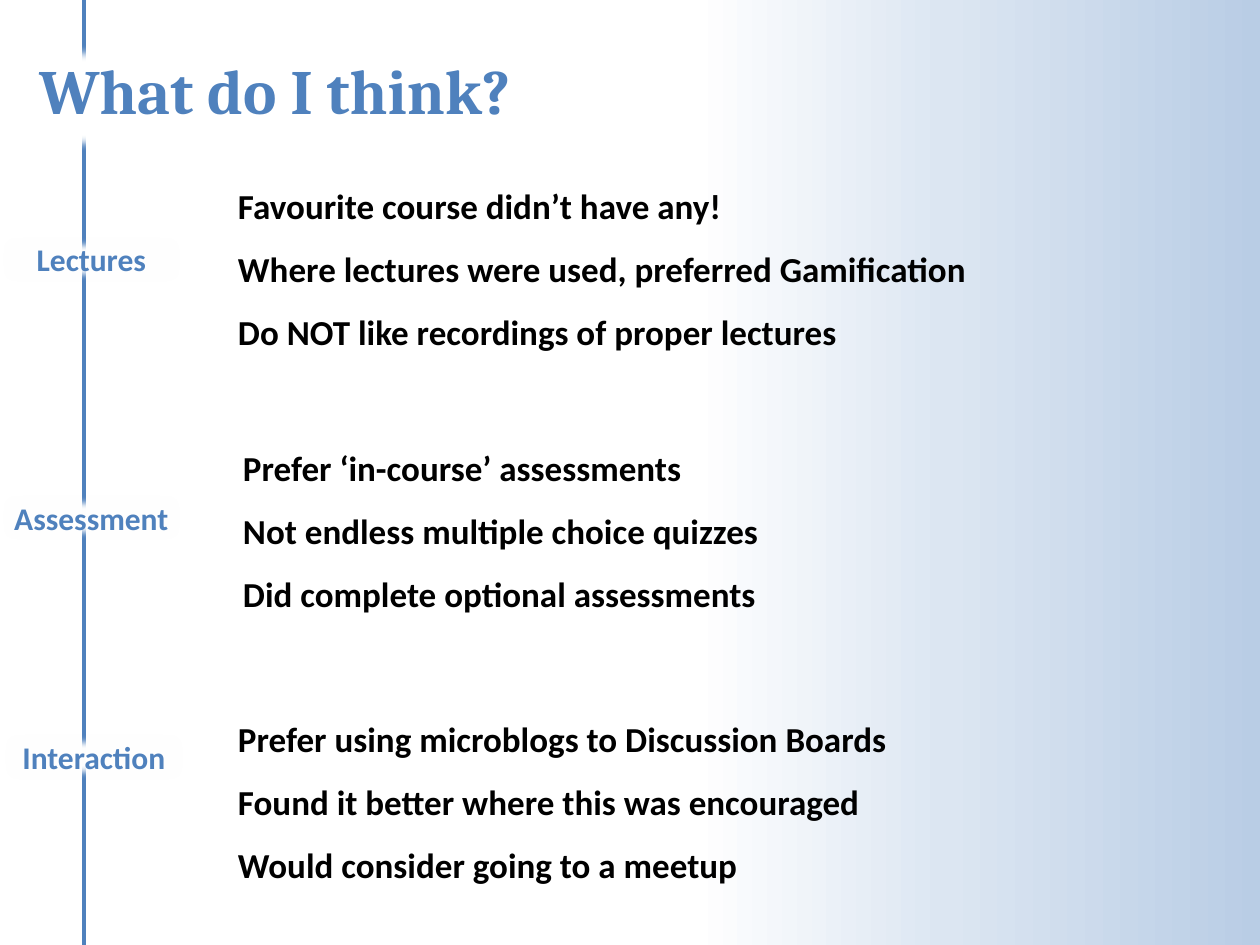
from copy import deepcopy

from lxml import etree
from pptx import Presentation
from pptx.dml.color import RGBColor
from pptx.enum import shapes, text
from pptx.oxml import ns
from pptx.util import Inches, Pt

BLUE = RGBColor(0x4F, 0x81, 0xBD)
PALE_BLUE = RGBColor(0xDC, 0xE6, 0xF2)
MID_BLUE = RGBColor(0xB9, 0xCD, 0xE5)
WHITE = RGBColor(0xFF, 0xFF, 0xFF)
BLACK = RGBColor(0, 0, 0)

HEADING = {"name": "Cambria", "size": Pt(36), "bold": True}
LABEL = {"name": "Calibri", "size": Pt(18), "bold": True}
BODY = {"name": "Calibri", "size": Pt(20), "bold": True}


def write(box, lines, style, color, align, spacing=1.0):
    frame = box.text_frame
    frame.word_wrap = True
    frame.auto_size = text.MSO_AUTO_SIZE.SHAPE_TO_FIT_TEXT
    frame.vertical_anchor = text.MSO_ANCHOR.TOP
    frame.text = "\n".join(lines)
    for para in frame.paragraphs:
        para.alignment = align
        para.line_spacing = spacing
        for span in para.runs:
            for name, value in style.items():
                setattr(span.font, name, value)
            span.font.color.rgb = color


def whiten(box):
    """White fill with soft edges, which interrupts the timeline."""
    box.fill.solid()
    box.fill.fore_color.rgb = WHITE
    box.line.fill.background()
    effects = etree.SubElement(box.element.spPr, ns.qn("a:effectLst"))
    etree.SubElement(effects, ns.qn("a:softEdge"), rad="63500")


deck = Presentation()
deck.slide_width, deck.slide_height = Inches(10), Inches(7.5)
page = deck.slides.add_slide(deck.slide_layouts[5])

# Background: blue on the right fading to white
fill = page.background.fill
fill.gradient()
fill.gradient_angle = 180
first = page.element.find(".//" + ns.qn("a:gs"))
first.addnext(deepcopy(first))
for stop, place, color in zip(fill.gradient_stops, (0, 0.25, 0.45),
                              (MID_BLUE, PALE_BLUE, WHITE)):
    stop.position = place
    stop.color.rgb = color

# Vertical timeline
timeline = page.shapes.add_connector(
    shapes.MSO_CONNECTOR.STRAIGHT, Inches(0.67), 0, Inches(0.67), Inches(7.5))
timeline.line.color.rgb = BLUE
timeline.line.width = Pt(2.25)
etree.SubElement(timeline.element.spPr, ns.qn("a:effectLst"))

# Topics: label, its left and top, text left and top, lines
topics = [
    ("Lectures", 0, 1.86, 1.79, 1.25,
     ["Favourite course didn’t have any!",
      "Where lectures were used, preferred Gamification",
      "Do NOT like recordings of proper lectures"]),
    ("Assessment", 0, 3.91, 1.83, 3.33,
     ["Prefer ‘in-course’ assessments",
      "Not endless multiple choice quizzes",
      "Did complete optional assessments"]),
    ("Interaction", 0.02, 5.81, 1.79, 5.48,
     ["Prefer using microblogs to Discussion Boards",
      "Found it better where this was encouraged",
      "Would consider going to a meetup"]),
]
for name, label_left, label_top, left, top, lines in topics:
    label = page.shapes.add_shape(
        shapes.MSO_SHAPE.RECTANGLE, Inches(label_left), Inches(label_top),
        Inches(1.45), Inches(0.4))
    whiten(label)
    write(label, [name], LABEL, BLUE, text.PP_ALIGN.CENTER)
    body = page.shapes.add_textbox(
        Inches(left), Inches(top), Inches(8.19), Inches(1.62))
    write(body, lines, BODY, BLACK, text.PP_ALIGN.LEFT, 1.5)

# Title, brought in front of the timeline
title = page.shapes.title
title.left, title.top = Inches(0.21), Inches(0.36)
title.width, title.height = Inches(4.94), Inches(0.71)
whiten(title)
write(title, ["What do I think?"], HEADING, BLUE, text.PP_ALIGN.LEFT)
title.element.getparent().append(title.element)

deck.save("out.pptx")
